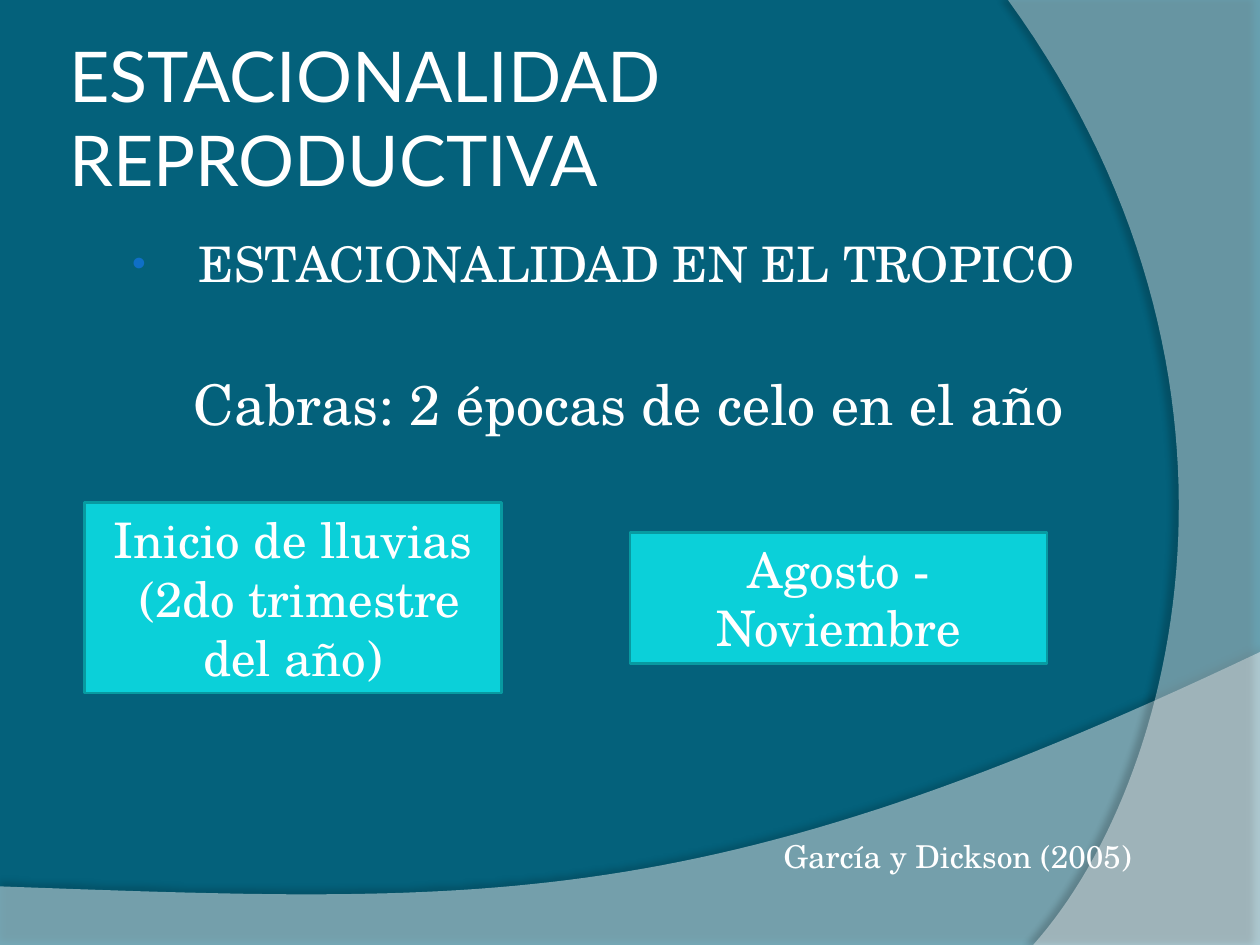
import collections

import lxml.etree
import pptx
import pptx.dml.color
import pptx.enum.shapes
import pptx.enum.text
import pptx.oxml
import pptx.oxml.ns
import pptx.util

COLS, ROWS = 100, 75
CELL = pptx.util.Inches(0.1)
SANS, SERIF = "Lato", "TeX Gyre Schola"
WHITE, TEAL, CYAN, EDGE, BLUE = "FFFFFF", "04617B", "0BD0D9", "089AA1", "0F6FC6"
ALIGN = pptx.enum.text.PP_ALIGN
ANCHOR = pptx.enum.text.MSO_ANCHOR

Box = collections.namedtuple("Box", "x y w h")  # columns and rows


def part(box, x, y, w, h):
    """Box inside another, given as shares of it."""
    return Box(box.x + x * box.w, box.y + y * box.h, w * box.w, h * box.h)


def emu(box):
    return [round(n * CELL) for n in box]


def color(code):
    return pptx.dml.color.RGBColor.from_string(code)


def add(node, tag, **attrs):
    child = lxml.etree.SubElement(node, pptx.oxml.ns.qn(tag))
    for name, value in attrs.items():
        child.set(name, str(value))
    return child


def write(shape, text, size=28, font=SERIF, align=ALIGN.LEFT,
          anchor=ANCHOR.TOP, inset=0.1, bullet=False):
    frame = shape.text_frame
    frame.word_wrap = True
    frame.vertical_anchor = anchor
    frame.margin_left = frame.margin_right = pptx.util.Inches(inset)
    frame.margin_top = frame.margin_bottom = pptx.util.Inches(0.05)
    for num, line in enumerate(text.split("\n")):
        para = frame.add_paragraph() if num else frame.paragraphs[0]
        para.alignment = align
        if bullet:
            props = para._p.get_or_add_pPr()
            props.set("marL", str(pptx.util.Inches(0.57)))
            props.set("indent", str(pptx.util.Inches(-0.53)))
            add(add(props, "a:buClr"), "a:srgbClr", val=BLUE)
            add(props, "a:buSzPct", val=80000)
            add(props, "a:buFont", typeface="Arial")
            add(props, "a:buChar", char="•")
        run = para.add_run()
        run.text = line
        run.font.size = pptx.util.Pt(size)
        run.font.name = font
        run.font.color.rgb = color(WHITE)


def label(slide, box, text, **look):
    write(slide.shapes.add_textbox(*emu(box)), text, **look)


def curve(a, b, c, d, steps=60):
    """Points along a cubic curve."""
    for n in range(steps + 1):
        t = n / steps
        u = 1 - t
        yield tuple(u**3 * p + 3 * u * u * t * q + 3 * u * t * t * r + t**3 * s
                    for p, q, r, s in zip(a, b, c, d))


def wave(slide, box, points, alpha, shade, dist, angle):
    """Clear white outline with a soft shadow; points are shares of the box."""
    spots = [((box.x + x * box.w) * CELL, (box.y + y * box.h) * CELL)
             for x, y in points]
    pen = slide.shapes.build_freeform(*map(round, spots[0]))
    pen.add_line_segments([tuple(map(round, spot)) for spot in spots[1:]])
    shape = pen.convert_to_shape()
    shape.fill.solid()
    shape.fill.fore_color.rgb = color(WHITE)
    shape.line.fill.background()
    props = shape._element.spPr
    tint = props.find(".//" + pptx.oxml.ns.qn("a:srgbClr"))
    add(tint, "a:alpha", val=alpha * 1000)
    cast = add(add(props, "a:effectLst"), "a:outerShdw",
               blurRad=pptx.util.Pt(4), dist=pptx.util.Pt(dist),
               dir=angle * 60000, algn="ctr", rotWithShape=0)
    add(add(cast, "a:srgbClr", val="000000"), "a:alpha", val=shade * 1000)


def waves(slide, box):
    low = [(0, 1), (1, 1), *curve((1, 0), (0.56, 0.9), (0.39, 0.86), (0, 0.8))]
    wave(slide, part(box, 0, 0.69, 1, 0.31), low, 45, 35, 3.5, 270)
    side = [(1, 0), (1, 1),
            *curve((0.1, 1), (0.67, 0.83), (1.09, 0.4), (0, 0))]
    wave(slide, part(box, 0.8, 0, 0.2, 1), side, 40, 45, 4, 180)


def title(slide, box):
    label(slide, box, "ESTACIONALIDAD REPRODUCTIVA", size=40, font=SANS,
          anchor=ANCHOR.MIDDLE, inset=0.05)


def body(slide, box):
    label(slide, part(box, 0, 0.01, 1, 0.11), "ESTACIONALIDAD EN EL TROPICO",
          bullet=True)
    label(slide, part(box, 0, 0.22, 1, 0.12),
          "Cabras: 2 épocas de celo en el año", size=32, align=ALIGN.CENTER)
    label(slide, part(box, 0, 0.94, 1, 0.08), "García y Dickson (2005)",
          size=18, align=ALIGN.RIGHT)


def card(slide, box, text):
    kind = pptx.enum.shapes.MSO_SHAPE.RECTANGLE
    shape = slide.shapes.add_shape(kind, *emu(box))
    shape.shadow.inherit = False
    shape.fill.solid()
    shape.fill.fore_color.rgb = color(CYAN)
    shape.line.color.rgb = color(EDGE)
    shape.line.width = pptx.util.Pt(1.5)
    write(shape, text, align=ALIGN.CENTER, anchor=ANCHOR.MIDDLE)


def cards(slide, box):
    """Two cards of equal width, centred on one line."""
    wide = 33.1
    mid = box.y + box.h / 2
    items = [(box.x, 15.1, "Inicio de lluvias\n (2do trimestre del año)"),
             (box.x + box.w - wide, 10.4, "Agosto - Noviembre")]
    for x, high, text in items:
        card(slide, Box(x, mid - high / 2, wide, high), text)


def main():
    deck = pptx.Presentation()
    deck.slide_width, deck.slide_height = COLS * CELL, ROWS * CELL
    slide = deck.slides.add_slide(deck.slide_layouts[6])
    slide.background.fill.solid()
    slide.background.fill.fore_color.rgb = color(TEAL)
    waves(slide, Box(0, 0, COLS, ROWS))
    title(slide, Box(5, 3, 81.7, 12.5))
    body(slide, Box(9.1, 17.5, 81.7, 51.5))
    cards(slide, Box(6.7, 39.9, 76.4, 15.1))
    deck.save("out.pptx")


if __name__ == "__main__":
    main()
